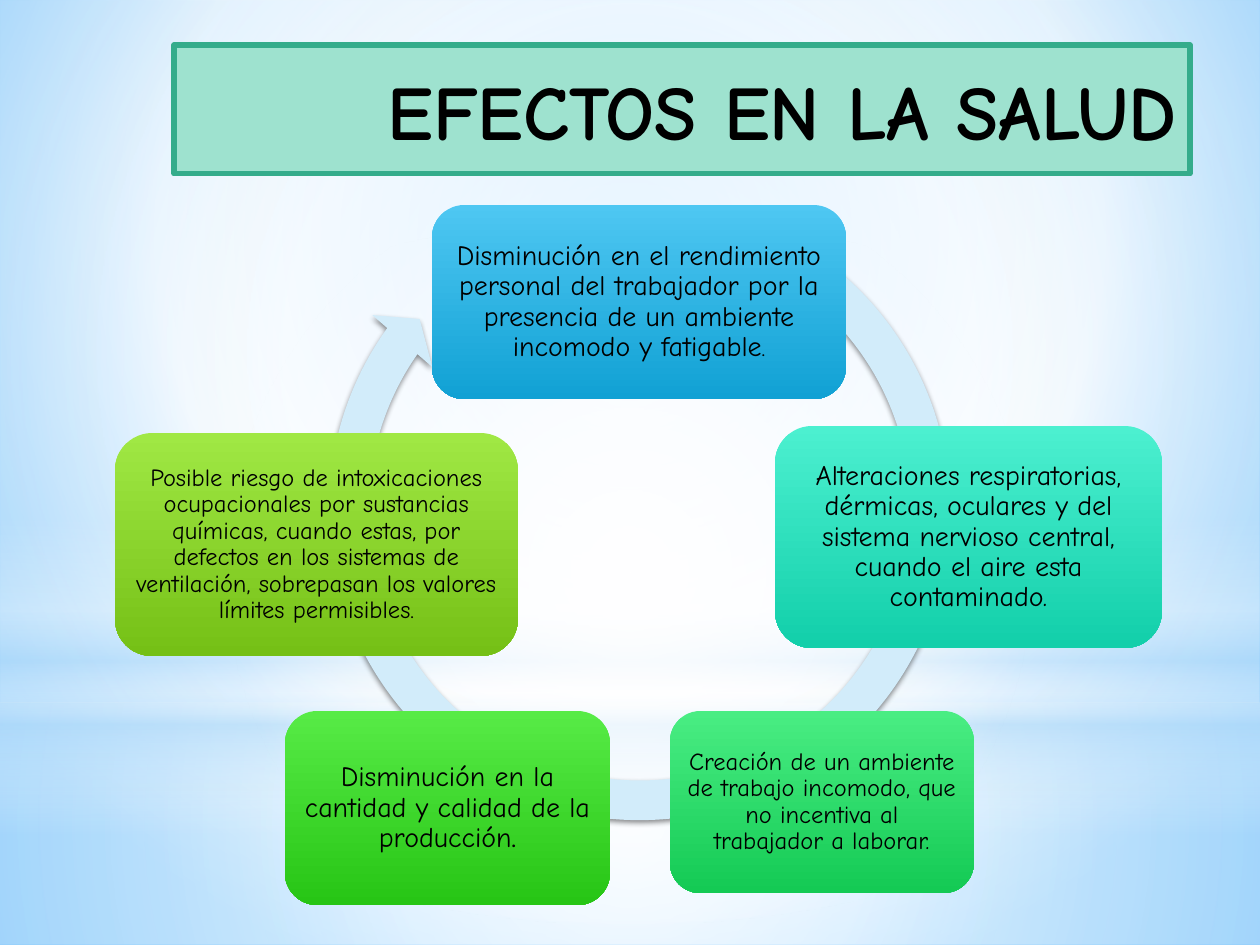
import pptx
import pptx.util
from lxml import etree
from pptx.dml.color import RGBColor
from pptx.enum.shapes import MSO_SHAPE
from pptx.enum.text import MSO_ANCHOR, PP_ALIGN
from pptx.oxml.ns import qn

PX = 914400 / 126
MAIN_FONT = "Comic Neue"
STOP_FONT = "Karla"

BLACK = RGBColor(0x00, 0x00, 0x00)
WHITE = RGBColor(0xFF, 0xFF, 0xFF)
SKY = RGBColor(0x9E, 0xD5, 0xFF)
DEEP_SKY = RGBColor(0x5B, 0xB9, 0xFF)
HAZE = RGBColor(0xB4, 0xDC, 0xFA)
MINT = RGBColor(0x9E, 0xE2, 0xCF)
JADE = RGBColor(0x34, 0xAC, 0x8B)
PALE_BLUE = RGBColor(0xD2, 0xEC, 0xFA)
BLUE = (RGBColor(0x4E, 0xC7, 0xF2), RGBColor(0x11, 0xA1, 0xD4))
TEAL = (RGBColor(0x4C, 0xF0, 0xD0), RGBColor(0x12, 0xCF, 0xAA))
EMERALD = (RGBColor(0x49, 0xED, 0x83), RGBColor(0x14, 0xCA, 0x54))
GREEN = (RGBColor(0x57, 0xEB, 0x46), RGBColor(0x27, 0xC5, 0x15))
LIME = (RGBColor(0xA0, 0xE8, 0x44), RGBColor(0x75, 0xC0, 0x16))

CENTRE = (50, 50, 50, 50)

HAZE_LAYERS = [
    (MSO_SHAPE.RECTANGLE, (0, 703, 1260, 242),
     [(0, WHITE, 91), (37, WHITE, 76), (100, HAZE, 79)], CENTRE),
    (MSO_SHAPE.RECTANGLE, (0, 0, 1260, 703),
     [(0, WHITE, 89), (48, WHITE, 62), (100, HAZE, 79)], CENTRE),
    (MSO_SHAPE.RECTANGLE, (0, 519, 1260, 315),
     [(0, WHITE, 0), (29, WHITE, 30), (45, HAZE, 40),
      (55, WHITE, 26), (65, HAZE, 60), (100, WHITE, 0)], None),
    (MSO_SHAPE.OVAL, (0, 221, 1260, 703),
     [(0, WHITE, 100), (56, WHITE, 0)], CENTRE),
]

CARDS = [
    ((432, 205, 414, 194), BLUE, 16,
     "Disminución en el rendimiento personal del trabajador por la presencia "
     "de un ambiente incomodo y fatigable", 10),
    ((775, 426, 387, 222), TEAL, 16,
     "Alteraciones respiratorias, dérmicas, oculares y del sistema nervioso "
     "central, cuando el aire esta contaminado.", None),
    ((670, 711, 304, 182), EMERALD, 14,
     "Creación de un ambiente de trabajo incomodo, que no incentiva al "
     "trabajador a laborar.", None),
    ((285, 711, 325, 194), GREEN, 16,
     "Disminución en la cantidad y calidad de la producción", 14),
    ((115, 433, 403, 223), LIME, 14,
     "Posible riesgo de intoxicaciones ocupacionales por sustancias químicas, "
     "cuando estas, por defectos en los sistemas de ventilación, sobrepasan "
     "los valores límites permisibles", 10),
]


def px(length):
    return round(length * PX)


def add_colour(parent, colour, opacity):
    node = etree.SubElement(parent, qn("a:srgbClr"), val=str(colour))
    if opacity < 100:
        etree.SubElement(node, qn("a:alpha"), val=str(opacity * 1000))


def paint_gradient(fill, element, stops, focus=None):
    fill.solid()
    solid = next(element.iter(qn("a:solidFill")))
    gradient = etree.Element(qn("a:gradFill"), rotWithShape="1")
    stop_list = etree.SubElement(gradient, qn("a:gsLst"))
    for position, colour, opacity in stops:
        stop = etree.SubElement(stop_list, qn("a:gs"), pos=str(position * 1000))
        add_colour(stop, colour, opacity)
    if focus:
        way = etree.SubElement(gradient, qn("a:path"), path="circle")
        sides = {side: str(share * 1000) for side, share in zip("ltrb", focus)}
        etree.SubElement(way, qn("a:fillToRect"), **sides)
    else:
        etree.SubElement(gradient, qn("a:lin"), ang="5400000", scaled="0")
    solid.getparent().replace(solid, gradient)


def add_plain_shape(page, kind, bounds):
    shape = page.shapes.add_shape(kind, *map(px, bounds))
    shape.shadow.inherit = False
    shape.line.fill.background()
    return shape


def add_gradient_shape(page, kind, bounds, stops, focus=None):
    shape = add_plain_shape(page, kind, bounds)
    paint_gradient(shape.fill, shape._element, stops, focus)
    return shape


def start_text(shape, alignment):
    frame = shape.text_frame
    frame.word_wrap = True
    frame.vertical_anchor = MSO_ANCHOR.MIDDLE
    para = frame.paragraphs[0]
    para.alignment = alignment
    return para


def add_span(para, text, size, font=MAIN_FONT, bold=False):
    span = para.add_run()
    span.text = text
    span.font.name = font
    span.font.size = pptx.util.Pt(size)
    span.font.bold = bold
    span.font.color.rgb = BLACK


def add_title(page):
    box = add_plain_shape(page, MSO_SHAPE.RECTANGLE, (174, 45, 1016, 129))
    box.fill.solid()
    box.fill.fore_color.rgb = MINT
    box.line.color.rgb = JADE
    box.line.width = pptx.util.Pt(3)
    para = start_text(box, PP_ALIGN.RIGHT)
    add_span(para, "EFECTOS EN LA SALUD", 44, bold=True)


def add_cycle_arrow(page):
    arrow = add_plain_shape(page, MSO_SHAPE.CIRCULAR_ARROW, (309, 179, 661, 661))
    for index, value in enumerate((0.06, 3.31, 129.23, 179.3, 0.06)):
        arrow.adjustments[index] = value
    arrow.fill.solid()
    arrow.fill.fore_color.rgb = PALE_BLUE
    effects = next(arrow._element.iter(qn("a:effectLst")))
    shadow = etree.SubElement(
        effects, qn("a:outerShdw"), blurRad=str(pptx.util.Pt(3.1)),
        dist=str(pptx.util.Pt(1.8)), dir="5400000", rotWithShape="0")
    add_colour(shadow, BLACK, 45)


def add_card(page, bounds, colours, size, text, stop_size):
    top, bottom = colours
    card = add_gradient_shape(page, MSO_SHAPE.ROUNDED_RECTANGLE, bounds,
                              [(0, top, 100), (100, bottom, 100)])
    frame = card.text_frame
    frame.margin_left = frame.margin_right = px(8)
    frame.margin_top = frame.margin_bottom = px(8)
    para = start_text(card, PP_ALIGN.CENTER)
    para.line_spacing = 0.9
    add_span(para, text, size)
    if stop_size:
        add_span(para, ".", stop_size, STOP_FONT)


def main():
    deck = pptx.Presentation()
    deck.slide_width, deck.slide_height = px(1260), px(945)
    page = deck.slides.add_slide(deck.slide_layouts[6])
    paint_gradient(page.background.fill, page._element,
                   [(0, SKY, 100), (60, WHITE, 100), (100, DEEP_SKY, 100)],
                   (20, 10, 20, 60))
    for layer in HAZE_LAYERS:
        add_gradient_shape(page, *layer)
    add_title(page)
    add_cycle_arrow(page)
    for card in CARDS:
        add_card(page, *card)
    deck.save("out.pptx")


if __name__ == "__main__":
    main()
